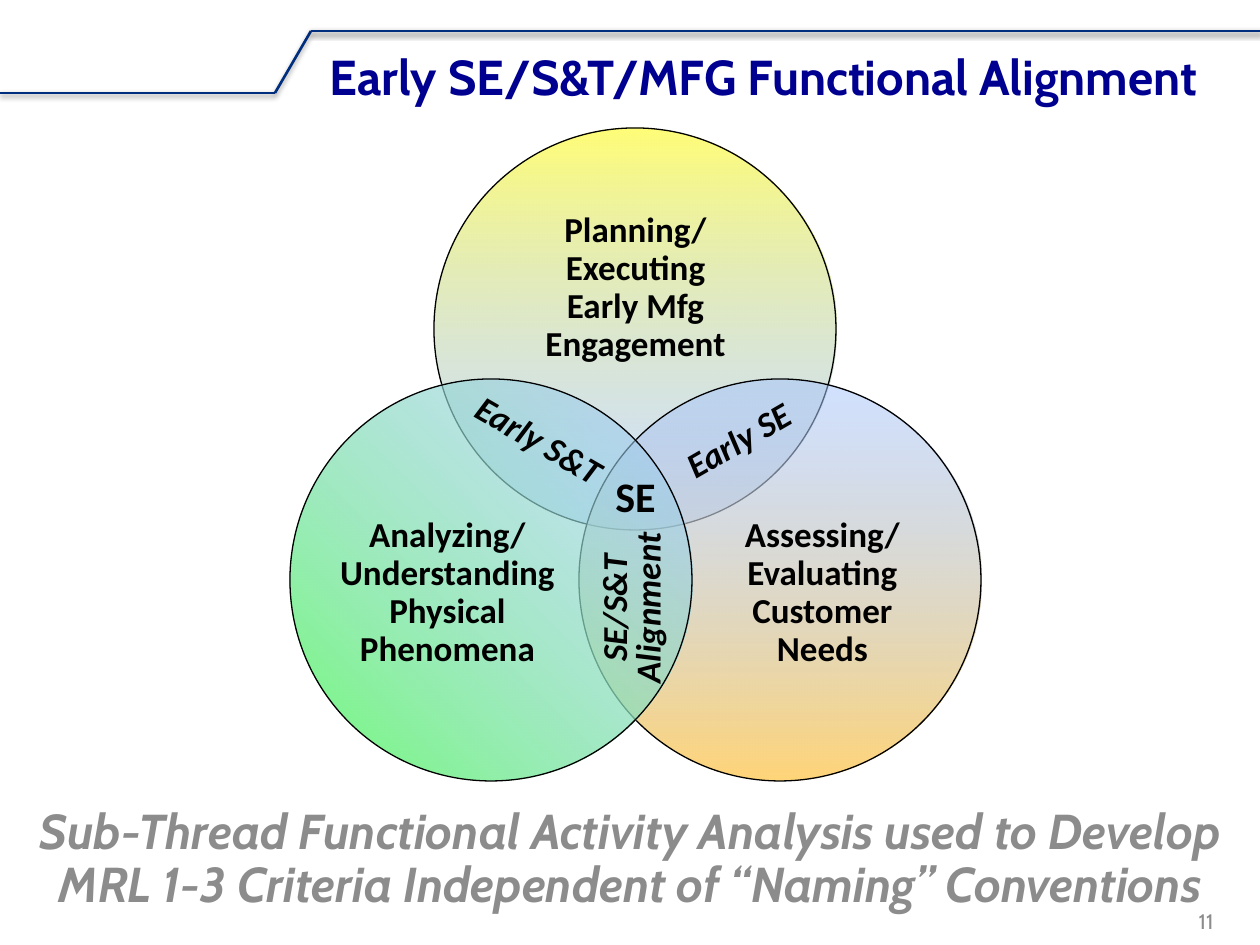
from dataclasses import dataclass
from pptx import Presentation
from pptx.dml.color import RGBColor
from pptx.enum.shapes import MSO_CONNECTOR, MSO_SHAPE
from pptx.enum.text import MSO_ANCHOR, PP_ALIGN
from pptx.oxml import parse_xml
from pptx.oxml.ns import nsdecls, qn
from pptx.oxml.xmlchemy import OxmlElement
from pptx.util import Emu, Pt


@dataclass(frozen=True)
class Theme:
    rule: str = "002E7E"
    title: str = "000090"
    ink: str = "000000"
    muted: str = "8C8C8C"
    overlap: str = "A4C4FF"
    head_font: str = "Cabin"
    body_font: str = "Calibri"
    head: int = 28
    center: int = 24
    label: int = 20
    small: int = 12


T = Theme()
PX = 914400 / 126
DIAMETER = 402

RULE = [(0, 93), (275, 93), (311, 31), (1260, 31)]
TITLE = "Early SE/S&T/MFG Functional Alignment"
SUMMARY = ("Sub-Thread Functional Activity Analysis used to Develop "
           "MRL 1-3 Criteria Independent of “Naming” Conventions")
PAGE = "11"

CIRCLES = [
    ((434, 128), "FFFD78", 270, (488, 198, 295, 180),
     ["Planning/", "Executing", "Early Mfg", "Engagement"]),
    ((579, 379), "FFD579", 90, (702, 483, 241, 220),
     ["Assessing/", "Evaluating", "Customer", "Needs"]),
    ((290, 379), "73FB79", 45, (327, 483, 241, 220),
     ["Analyzing/", "Understanding", "Physical", "Phenomena"]),
]
OVERLAPS = [
    (["Early SE"], (668, 412, 140, 55), 330, T.label, True, 1.0),
    (["Early S&T"], (457, 412, 165, 55), 30, T.label, True, 1.0),
    (["SE/S&T", "Alignment"], (546, 567, 178, 82), 270, T.label, True, 0.8),
    (["SE"], (602, 464, 67, 63), 0, T.center, False, 1.0),
]


def px(*values):
    return [Emu(round(v * PX)) for v in values]


def rgb(value):
    return RGBColor.from_string(value)


def add_rule(shapes, start, end):
    c = shapes.add_connector(MSO_CONNECTOR.STRAIGHT, *px(*start, *end))
    c.line.color.rgb = rgb(T.rule)
    c.line.width = Pt(1.5)
    c._element.spPr.append(parse_xml(
        f'<a:effectLst {nsdecls("a")}>'
        '<a:outerShdw blurRad="39370" dist="20320" dir="5400000" rotWithShape="0">'
        f'<a:srgbClr val="{T.ink}"><a:alpha val="38000"/></a:srgbClr>'
        '</a:outerShdw></a:effectLst>'))


def add_circle(shapes, corner, color, angle):
    s = shapes.add_shape(MSO_SHAPE.OVAL, *px(*corner, DIAMETER, DIAMETER))
    s.shadow.inherit = False
    s.fill.gradient()
    s.fill.gradient_angle = angle
    for stop, value in zip(s.fill.gradient_stops, (color, T.overlap)):
        stop.color.rgb = rgb(value)
    alpha = OxmlElement("a:alpha")
    alpha.set("val", "50000")
    s._element.spPr.findall(".//" + qn("a:srgbClr"))[1].append(alpha)
    s.line.color.rgb = rgb(T.ink)
    s.line.width = Pt(0.75)


def add_text(shapes, lines, box, size, color=T.ink, font=T.body_font, bold=True,
             italic=False, spacing=1.0, align=PP_ALIGN.CENTER,
             anchor=MSO_ANCHOR.MIDDLE, wrap=True, inset=True, rotation=0):
    s = shapes.add_textbox(*px(*box))
    s.rotation = rotation
    tf = s.text_frame
    tf.word_wrap = wrap
    tf.vertical_anchor = anchor
    if not inset:
        tf.margin_left = tf.margin_right = tf.margin_top = tf.margin_bottom = 0
    for i, line in enumerate(lines):
        p = tf.paragraphs[0] if i == 0 else tf.add_paragraph()
        p.text = line
        p.alignment = align
        p.line_spacing = spacing
        p.font.name = font
        p.font.size = Pt(size)
        p.font.bold = bold
        p.font.italic = italic
        p.font.color.rgb = rgb(color)


def main():
    prs = Presentation()
    prs.slide_width, prs.slide_height = px(1260, 945)
    shapes = prs.slides.add_slide(prs.slide_layouts[6]).shapes

    for start, end in zip(RULE, RULE[1:]):
        add_rule(shapes, start, end)
    add_text(shapes, [TITLE], (305, 32, 916, 88), T.head, T.title, T.head_font)

    for corner, color, angle, box, lines in CIRCLES:
        add_circle(shapes, corner, color, angle)
        add_text(shapes, lines, box, T.label, spacing=0.9, inset=False)
    for lines, box, rotation, size, italic, spacing in OVERLAPS:
        add_text(shapes, lines, box, size, italic=italic, spacing=spacing,
                 anchor=MSO_ANCHOR.TOP, wrap=False, rotation=rotation)

    add_text(shapes, [SUMMARY], (0, 800, 1260, 121), T.head, T.muted, T.head_font,
             italic=True, spacing=0.9)
    add_text(shapes, [PAGE], (932, 897, 294, 48), T.small, T.muted, T.head_font,
             bold=False, align=PP_ALIGN.RIGHT)
    prs.save("out.pptx")


if __name__ == "__main__":
    main()
